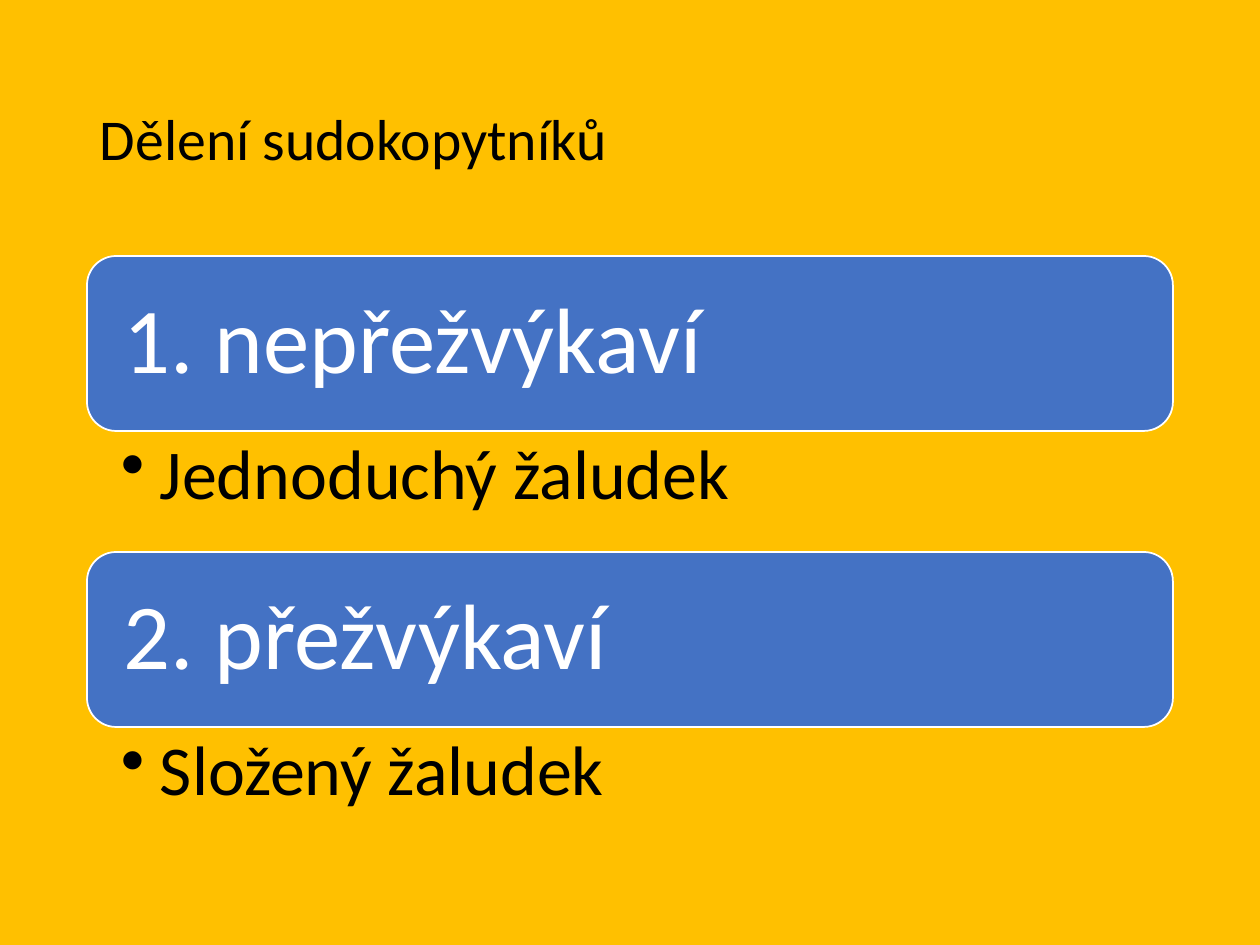
from lxml.etree import SubElement
from pptx import Presentation
from pptx.dml.color import RGBColor
from pptx.enum.shapes import MSO_SHAPE
from pptx.enum.text import MSO_ANCHOR, PP_ALIGN
from pptx.oxml.ns import qn
from pptx.util import Pt

TITLE = "Dělení sudokopytníků"
GROUPS = [
    ("1. nepřežvýkaví", "Jednoduchý žaludek"),
    ("2. přežvýkaví", "Složený žaludek"),
]

AMBER = RGBColor(0xFF, 0xC0, 0x00)
BLUE = RGBColor(0x44, 0x72, 0xC4)
WHITE = RGBColor(0xFF, 0xFF, 0xFF)
BLACK = RGBColor(0x00, 0x00, 0x00)

SCALE = 914400 / 126
LEFT, WIDTH = 87, 1086
TITLE_TOP, TITLE_HEIGHT = 50, 183
GROUPS_TOP, BAR_HEIGHT, DETAIL_HEIGHT = 256, 175, 121
BULLET_INDENT = 39


def px(length):
    return round(length * SCALE)


def area(top, height):
    return px(LEFT), px(top), px(WIDTH), px(height)


def write(shape, text, size, color, anchor, insets, bullet=False):
    frame = shape.text_frame
    frame.word_wrap = True
    frame.vertical_anchor = anchor
    (frame.margin_left, frame.margin_top,
     frame.margin_right, frame.margin_bottom) = map(px, insets)
    para = frame.paragraphs[0]
    para.text = text
    para.alignment = PP_ALIGN.LEFT
    para.line_spacing = 0.9
    if bullet:
        properties = para._p.get_or_add_pPr()
        properties.set("marL", str(px(BULLET_INDENT)))
        properties.set("indent", str(-px(BULLET_INDENT)))
        SubElement(properties, qn("a:buChar"), char="•")
    para.font.name = "Calibri"
    para.font.size = Pt(size)
    para.font.color.rgb = color


deck = Presentation()
deck.slide_width, deck.slide_height = px(1260), px(945)
page = deck.slides.add_slide(deck.slide_layouts[6])
page.background.fill.solid()
page.background.fill.fore_color.rgb = AMBER

title = page.shapes.add_textbox(*area(TITLE_TOP, TITLE_HEIGHT))
write(title, TITLE, 33, BLACK, MSO_ANCHOR.MIDDLE, (13, 6, 13, 6))

for index, (name, detail) in enumerate(GROUPS):
    top = GROUPS_TOP + index * (BAR_HEIGHT + DETAIL_HEIGHT)
    bar = page.shapes.add_shape(MSO_SHAPE.ROUNDED_RECTANGLE, *area(top, BAR_HEIGHT))
    bar.shadow.inherit = False
    bar.fill.solid()
    bar.fill.fore_color.rgb = BLUE
    bar.line.color.rgb = WHITE
    bar.line.width = Pt(1)
    write(bar, name, 53, WHITE, MSO_ANCHOR.MIDDLE, (28, 28, 28, 28))

    box = page.shapes.add_textbox(*area(top + BAR_HEIGHT, DETAIL_HEIGHT))
    write(box, detail, 40, BLACK, MSO_ANCHOR.TOP, (34, 8, 39, 8), bullet=True)

deck.save("out.pptx")
